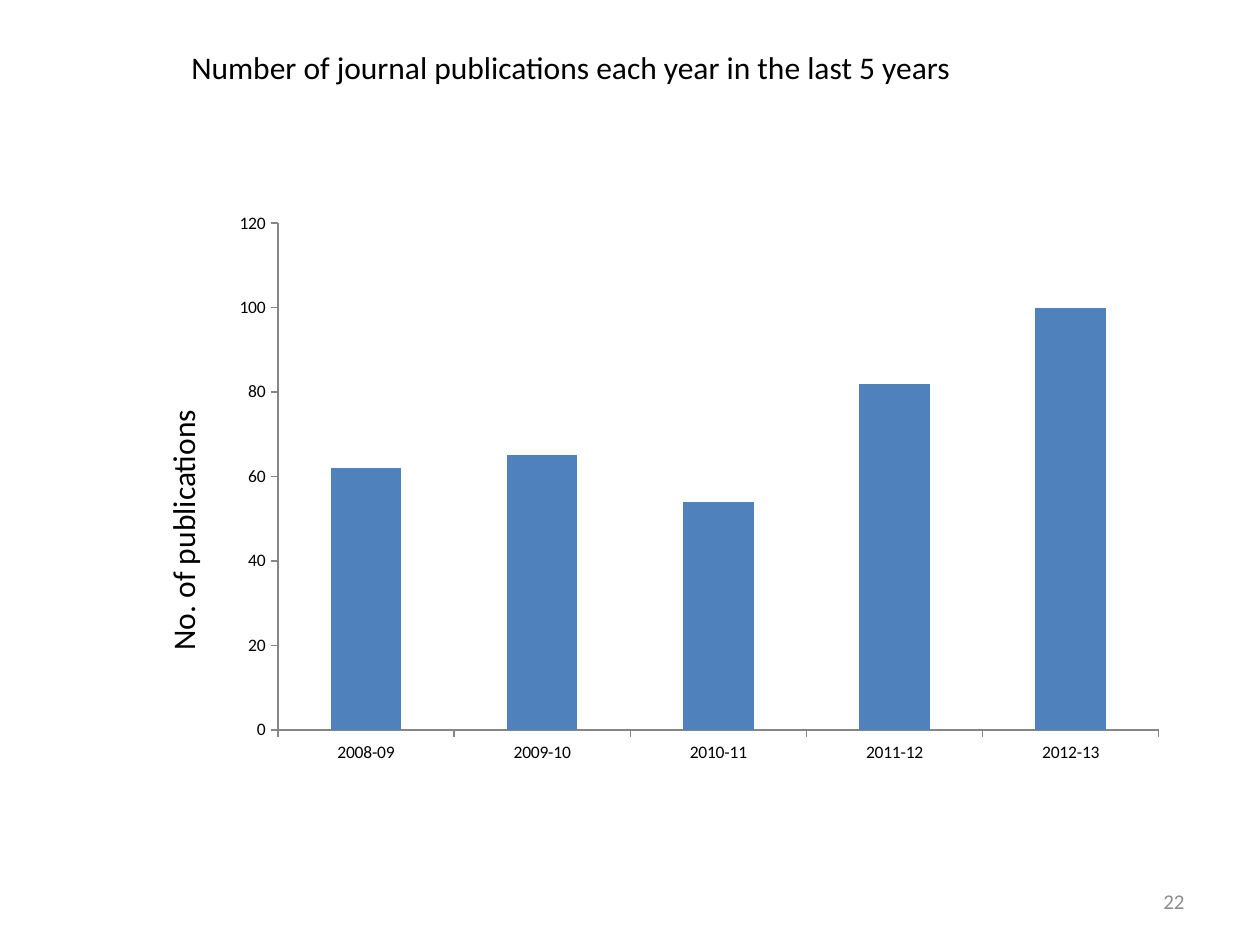
from lxml import etree
from pptx import Presentation
from pptx.chart.data import CategoryChartData
from pptx.dml.color import RGBColor
from pptx.enum import chart as ch, text
from pptx.util import Inches, Pt

BLACK = RGBColor(0x00, 0x00, 0x00)
GREY = RGBColor(0x8C, 0x8C, 0x8C)
AXIS = RGBColor(0x86, 0x86, 0x86)
BLUE = RGBColor(0x4F, 0x81, 0xBD)
FONT = "Calibri"

YEARS = ["2008-09", "2009-10", "2010-11", "2011-12", "2012-13"]
COUNTS = [62, 65, 54, 82, 100]


def style(font, size, color):
    font.name, font.size = FONT, Pt(size)
    font.color.rgb = color


def write(slide, box, words, size=18, color=BLACK, turn=0,
          align=text.PP_ALIGN.LEFT, anchor=text.MSO_ANCHOR.TOP):
    shape = slide.shapes.add_textbox(*map(Inches, box))
    shape.rotation = turn
    frame = shape.text_frame
    frame.word_wrap = True
    frame.vertical_anchor = anchor
    para = frame.paragraphs[0]
    para.alignment = align
    run = para.add_run()
    run.text = words
    style(run.font, size, color)


def set_plot(chart, x, y, w, h):
    """Fix the inner plot area, in fractions of the chart."""
    area = chart.plots[0]._element.getparent()
    ns = area.nsmap["c"]
    for old in area.findall(f"{{{ns}}}layout"):
        area.remove(old)
    layout = etree.Element(f"{{{ns}}}layout")
    manual = etree.SubElement(layout, f"{{{ns}}}manualLayout")
    parts = dict(layoutTarget="inner", xMode="edge", yMode="edge",
                 x=x, y=y, w=w, h=h)
    for name, val in parts.items():
        etree.SubElement(manual, f"{{{ns}}}{name}").set("val", str(val))
    area.insert(0, layout)


def add_bars(slide, box):
    data = CategoryChartData()
    data.categories = YEARS
    data.add_series("Series 1", COUNTS)
    chart = slide.shapes.add_chart(
        ch.XL_CHART_TYPE.COLUMN_CLUSTERED, *map(Inches, box), data).chart
    chart.has_legend = chart.has_title = False
    style(chart.font, 10, BLACK)

    # Columns
    plot = chart.plots[0]
    plot.vary_by_categories = False
    plot.gap_width = 150
    fill = plot.series[0].format.fill
    fill.solid()
    fill.fore_color.rgb = BLUE

    # Axes
    for axis in (chart.category_axis, chart.value_axis):
        axis.has_major_gridlines = False
        axis.major_tick_mark = ch.XL_TICK_MARK.OUTSIDE
        axis.minor_tick_mark = ch.XL_TICK_MARK.NONE
        axis.format.line.color.rgb = AXIS
        axis.format.line.width = Pt(0.75)
    axis.minimum_scale, axis.maximum_scale, axis.major_unit = 0, 120, 20
    set_plot(chart, 0.06, 0.04, 0.92, 0.89)


def main():
    deck = Presentation()
    deck.slide_width, deck.slide_height = Inches(10), Inches(7.5)
    slide = deck.slides.add_slide(deck.slide_layouts[6])

    # Chart and its axis label
    add_bars(slide, (1.75, 1.59, 7.6, 4.52))
    write(slide, (0.11, 3.72, 2.68, 0.4), "No. of publications", turn=270)

    # Heading
    write(slide, (1.42, 0.33, 6.83, 0.4),
          "Number of journal publications each year in the last 5 years")

    # Page number
    write(slide, (7.17, 6.95, 2.33, 0.4), "22", size=12, color=GREY,
          align=text.PP_ALIGN.RIGHT, anchor=text.MSO_ANCHOR.MIDDLE)

    deck.save("out.pptx")


if __name__ == "__main__":
    main()
